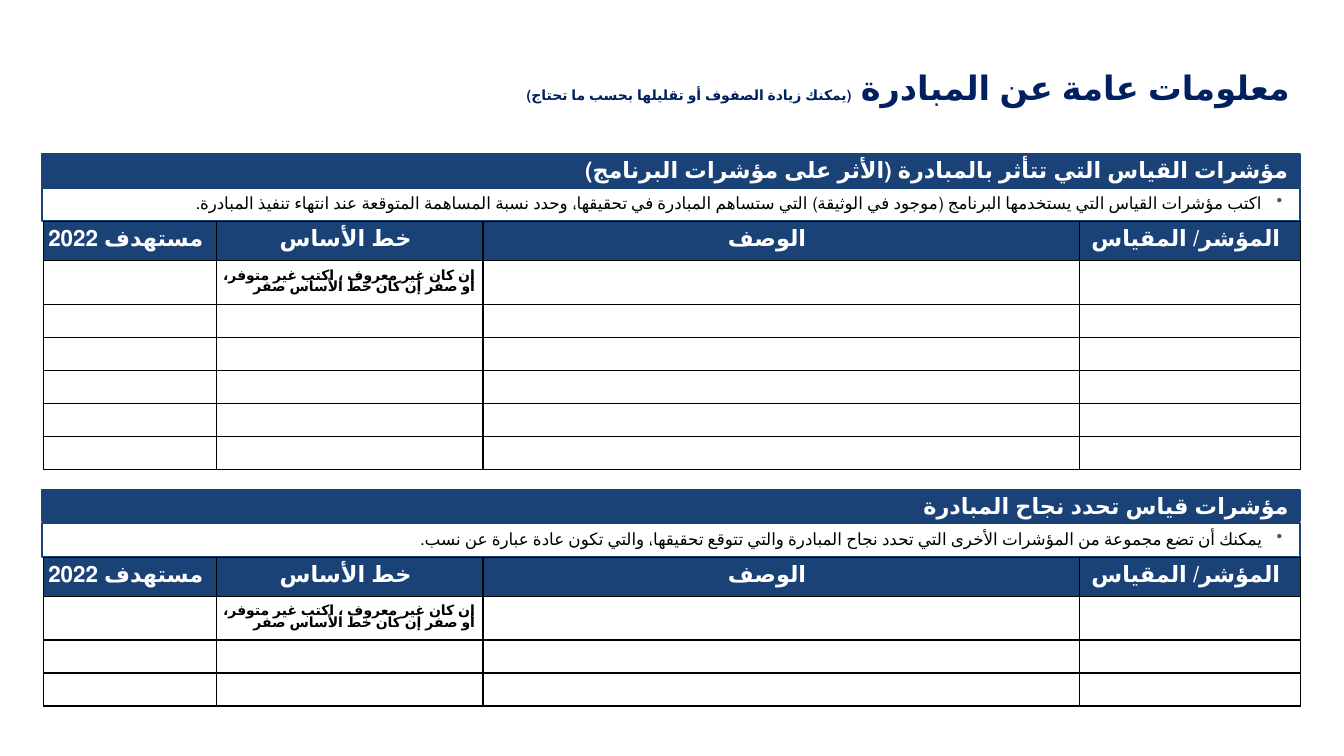
from lxml import etree
from pptx import Presentation
from pptx.dml.color import RGBColor
from pptx.enum.lang import MSO_LANGUAGE_ID
from pptx.enum.shapes import MSO_SHAPE
from pptx.enum.text import MSO_ANCHOR, PP_ALIGN
from pptx.oxml.ns import qn
from pptx.util import Pt

ARABIC = MSO_LANGUAGE_ID.ARABIC
RECTANGLE = MSO_SHAPE.RECTANGLE
TOP, MIDDLE = MSO_ANCHOR.TOP, MSO_ANCHOR.MIDDLE
CENTER, RIGHT = PP_ALIGN.CENTER, PP_ALIGN.RIGHT

COLORS = {"title": "002060", "blue": "1B4276", "white": "FFFFFF", "black": "000000", "bullet": "44546A"}
FORMATS = {
    "title": {"size": Pt(24), "bold": True},
    "note": {"size": Pt(10), "bold": True},
    "heading": {"size": Pt(16), "bold": True},
    "guide": {"size": Pt(12), "bold": False},
}
COLUMNS = [123.5, 190.5, 426, 158]
HEADERS = ["مستهدف 2022", "خط الأساس", "الوصف", "المؤشر/ المقياس"]
HINT = "إن كان غير معروف ، اكتب غير متوفر، أو صفر إن كان خط الأساس صفر"
SECTIONS = [
    (110.2, 7, "مؤشرات القياس التي تتأثر بالمبادرة (الأثر على مؤشرات البرنامج)",
     "اكتب مؤشرات القياس التي يستخدمها البرنامج (موجود في الوثيقة) التي ستساهم المبادرة في تحقيقها، "
     "وحدد نسبة المساهمة المتوقعة عند انتهاء تنفيذ المبادرة."),
    (350, 4, "مؤشرات قياس تحدد نجاح المبادرة",
     "يمكنك أن تضع مجموعة من المؤشرات الأخرى التي تحدد نجاح المبادرة والتي تتوقع تحقيقها، "
     "والتي تكون عادة عبارة عن نسب."),
]


def write(frame, pieces, color, align, rtl=True, spacing=None):
    para = frame.paragraphs[0]
    para.alignment = align
    para.line_spacing = spacing
    if rtl:
        para._p.get_or_add_pPr().set("rtl", "1")
    for text, style in pieces:
        span = para.add_run()
        span.text = text
        span.font.name = "Calibri"
        span.font.language_id = ARABIC
        span.font.color.rgb = RGBColor.from_string(COLORS[color])
        for key, value in FORMATS[style].items():
            setattr(span.font, key, value)
    return para


def add_bar(top, height, fill, anchor, inset):
    bar = page.shapes.add_shape(RECTANGLE, Pt(30.2), Pt(top), Pt(898.6), Pt(height))
    bar.shadow.inherit = False
    bar.fill.solid()
    bar.fill.fore_color.rgb = RGBColor.from_string(COLORS[fill])
    bar.line.color.rgb = RGBColor.from_string(COLORS["blue"])
    bar.line.width = Pt(1.5)
    frame = bar.text_frame
    frame.word_wrap = True
    frame.vertical_anchor = anchor
    for side in ("left", "top", "right", "bottom"):
        setattr(frame, f"margin_{side}", Pt(inset))
    return frame


deck = Presentation()
deck.slide_width, deck.slide_height = Pt(960), Pt(540)
page = deck.slides.add_slide(deck.slide_layouts[5])

title = page.shapes.title
title.left, title.top, title.width, title.height = Pt(154), Pt(28.8), Pt(774.8), Pt(69.8)
title.text_frame.vertical_anchor = MIDDLE
write(title.text_frame, [("معلومات عامة عن المبادرة ", "title"),
                         ("(يمكنك زيادة الصفوف أو تقليلها بحسب ما تحتاج)", "note")],
      "title", RIGHT, spacing=0.9)

for top, row_count, heading, guide in SECTIONS:
    write(add_bar(top, 22.4, "blue", MIDDLE, 8), [(heading, "heading")], "white", RIGHT)

    para = write(add_bar(top + 23.8, 23.8, "white", TOP, 3.6), [(guide, "guide")], "black", RIGHT)
    properties = para._p.get_or_add_pPr()
    for key, value in {"marR": "0", "marL": Pt(22.5), "indent": Pt(-13.5)}.items():
        properties.set(key, str(value))
    bullet_color = etree.SubElement(properties, qn("a:buClr"))
    etree.SubElement(bullet_color, qn("a:srgbClr"), val=COLORS["bullet"])
    etree.SubElement(properties, qn("a:buChar"), char="•")

    heights = [27.6, 31.4] + [23.6] * (row_count - 2)
    table = page.shapes.add_table(row_count, len(COLUMNS), Pt(31), Pt(top + 48.2),
                                  Pt(sum(COLUMNS)), Pt(sum(heights))).table
    table.first_row = table.horz_banding = False
    for column, width in zip(table.columns, COLUMNS):
        column.width = Pt(width)
    for row, height in zip(table.rows, heights):
        row.height = Pt(height)

    for cell in table.iter_cells():
        cell.margin_left = cell.margin_top = cell.margin_bottom = 0
        cell.margin_right = Pt(5.8)
        cell.vertical_anchor = MIDDLE
        borders = cell._tc.get_or_add_tcPr()
        for side in ("lnL", "lnR", "lnT", "lnB"):
            line = etree.SubElement(borders, qn(f"a:{side}"), w=str(Pt(1)))
            paint = etree.SubElement(line, qn("a:solidFill"))
            etree.SubElement(paint, qn("a:srgbClr"), val=COLORS["black"])
        cell.fill.background()

    for index, label in enumerate(HEADERS):
        cell = table.cell(0, index)
        cell.fill.solid()
        cell.fill.fore_color.rgb = RGBColor.from_string(COLORS["blue"])
        write(cell.text_frame, [(label, "heading")], "white", CENTER, index == 3, 0.85)
    table.cell(0, 2).margin_right = Pt(20)
    write(table.cell(1, 1).text_frame, [(HINT, "note")], "black", RIGHT, False, 0.85)

deck.save("out.pptx")
